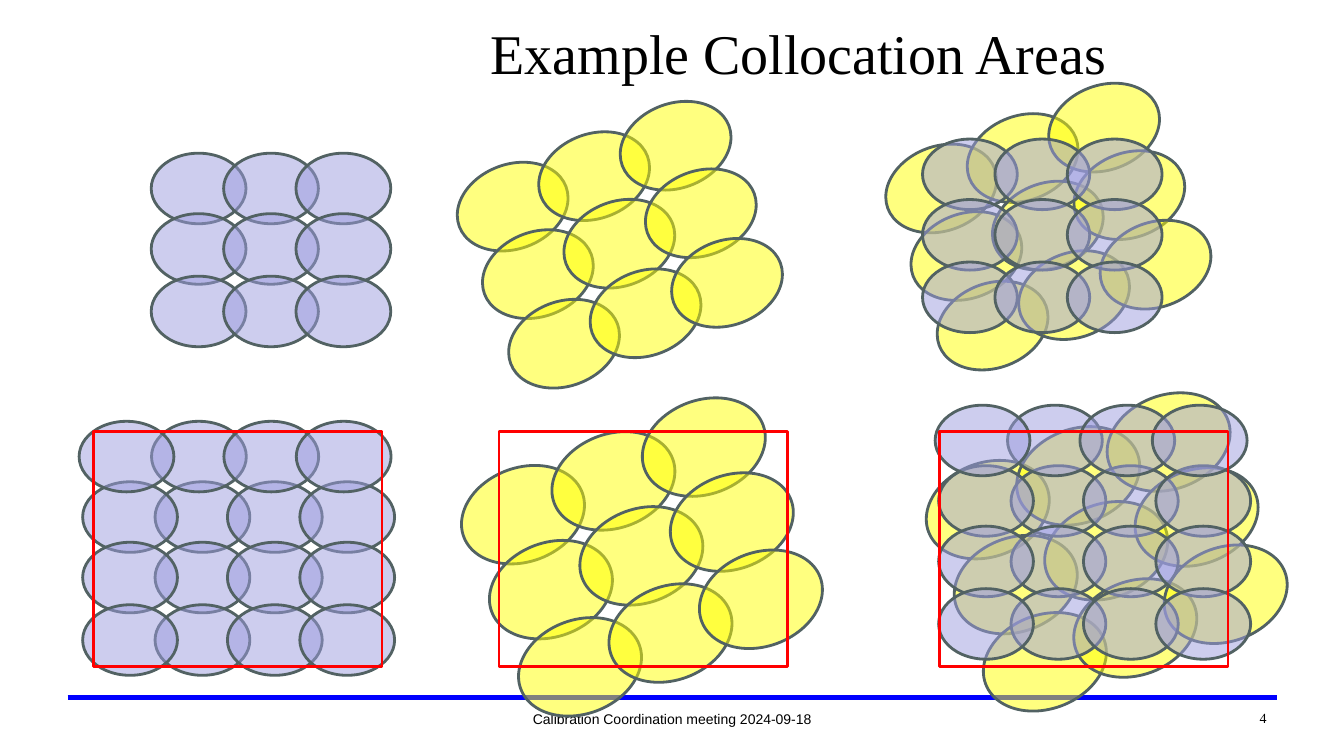
from dataclasses import dataclass

from lxml.etree import SubElement
from pptx import Presentation
from pptx.dml.color import RGBColor
from pptx.enum.shapes import MSO_CONNECTOR as Connector, MSO_SHAPE as Preset
from pptx.enum.text import MSO_ANCHOR as Anchor, PP_ALIGN as Align
from pptx.oxml.ns import qn
from pptx.util import Inches, Pt

CELL = 0.1
YELLOW = RGBColor(0xFF, 0xFF, 0x00)
LAVENDER = RGBColor(0x9C, 0x9C, 0xDF)
SLATE = RGBColor(0x52, 0x62, 0x63)
RED = RGBColor(0xFF, 0x00, 0x00)
BLUE = RGBColor(0x00, 0x00, 0xFF)
BLACK = RGBColor(0x00, 0x00, 0x00)
SERIF = "Times New Roman"
SANS = "Arial"


def grid(cells: float) -> int:
    return Inches(cells * CELL)


@dataclass(frozen=True)
class Sensor:
    color: RGBColor
    width: float
    height: float
    rotation: float
    column_step: tuple[float, float]
    row_offsets: tuple[tuple[float, float], ...]


@dataclass(frozen=True)
class Swath:
    sensor: Sensor
    left: float
    top: float
    columns: int = 3
    rows: int = 3
    scale: float = 1


@dataclass(frozen=True)
class Label:
    text: str
    left: float
    top: float
    width: float
    height: float
    size: int
    font: str
    align: Align


TILTED = Sensor(YELLOW, 11.3, 8.4, 339.6, (8.08, -3.02),
                ((0, 0), (2.5, 6.7), (5.1, 13.6)))
UPRIGHT = Sensor(LAVENDER, 9.4, 7, 0, (7.18, 0),
                 ((0, 0), (0, 6), (0, 12.2)))
ENLARGED = 1.11


def extended(left: float, top: float) -> list[Swath]:
    step = UPRIGHT.column_step[0]
    upper_left, upper_top = left - 0.35, top - 6
    return [
        Swath(UPRIGHT, left + step, top),
        Swath(UPRIGHT, left, top, columns=1),
        Swath(UPRIGHT, upper_left + step, upper_top, rows=1),
        Swath(UPRIGHT, upper_left, upper_top, columns=1, rows=1),
    ]


SWATHS = [
    Swath(TILTED, 45.2, 16.3),
    Swath(TILTED, 87.7, 14.5),
    Swath(UPRIGHT, 15, 15.2),
    Swath(UPRIGHT, 91.5, 13.8),
    Swath(TILTED, 45.6, 46.4, scale=ENLARGED),
    *extended(8.2, 47.8),
    Swath(TILTED, 91.7, 45.9, scale=ENLARGED),
    *extended(93.1, 46.2),
]

AREA_LEFTS = (9.3, 49.5, 93.2)
AREA_TOP, AREA_WIDTH, AREA_HEIGHT = 42.8, 28.6, 23.3

LABELS = [
    Label("Calibration Coordination meeting 2024-09-18",
          36.6, 70.1, 60.1, 2.5, 10, SANS, Align.CENTER),
    Label("Example Collocation Areas",
          36.7, 1.5, 85, 7.3, 40, SERIF, Align.CENTER),
    Label("4", 106.7, 70, 19.9, 2.5, 10, SERIF, Align.RIGHT),
]


def add_label(slide, label: Label) -> None:
    box = slide.shapes.add_textbox(grid(label.left), grid(label.top),
                                   grid(label.width), grid(label.height))
    frame = box.text_frame
    frame.word_wrap = True
    frame.vertical_anchor = Anchor.MIDDLE
    frame.margin_top = frame.margin_bottom = 0
    paragraph = frame.paragraphs[0]
    paragraph.text = label.text
    paragraph.alignment = label.align
    paragraph.font.size = Pt(label.size)
    paragraph.font.name = label.font
    paragraph.font.color.rgb = BLACK


def add_footer_rule(slide) -> None:
    rule = slide.shapes.add_connector(Connector.STRAIGHT, grid(6.7), grid(69.2),
                                      grid(126.7), grid(69.2))
    rule.line.color.rgb = BLUE
    rule.line.width = Pt(3)
    SubElement(rule.element.spPr, qn("a:effectLst"))


def add_outline(slide, preset: Preset, left: float, top: float,
                width: float, height: float, color: RGBColor):
    outline = slide.shapes.add_shape(preset, grid(left), grid(top),
                                     grid(width), grid(height))
    outline.shadow.inherit = False
    outline.line.color.rgb = color
    outline.line.width = Pt(2)
    return outline


def add_swath(slide, swath: Swath) -> None:
    sensor, scale = swath.sensor, swath.scale
    step_x, step_y = sensor.column_step
    for row_x, row_y in sensor.row_offsets[:swath.rows]:
        for column in range(swath.columns):
            footprint = add_outline(
                slide, Preset.OVAL,
                swath.left + scale * (row_x + column * step_x),
                swath.top + scale * (row_y + column * step_y),
                scale * sensor.width, scale * sensor.height, SLATE)
            footprint.rotation = sensor.rotation
            footprint.fill.solid()
            footprint.fill.fore_color.rgb = sensor.color
            tint = footprint.element.spPr.find(qn("a:solidFill"))[0]
            SubElement(tint, qn("a:alpha"), val="50000")


def main() -> None:
    deck = Presentation()
    deck.slide_width, deck.slide_height = Inches(13.33), Inches(7.5)
    slide = deck.slides.add_slide(deck.slide_layouts[6])
    add_footer_rule(slide)
    for label in LABELS:
        add_label(slide, label)
    for swath in SWATHS:
        add_swath(slide, swath)
    for left in AREA_LEFTS:
        area = add_outline(slide, Preset.RECTANGLE, left, AREA_TOP,
                           AREA_WIDTH, AREA_HEIGHT, RED)
        area.fill.background()
    deck.save("out.pptx")


if __name__ == "__main__":
    main()
